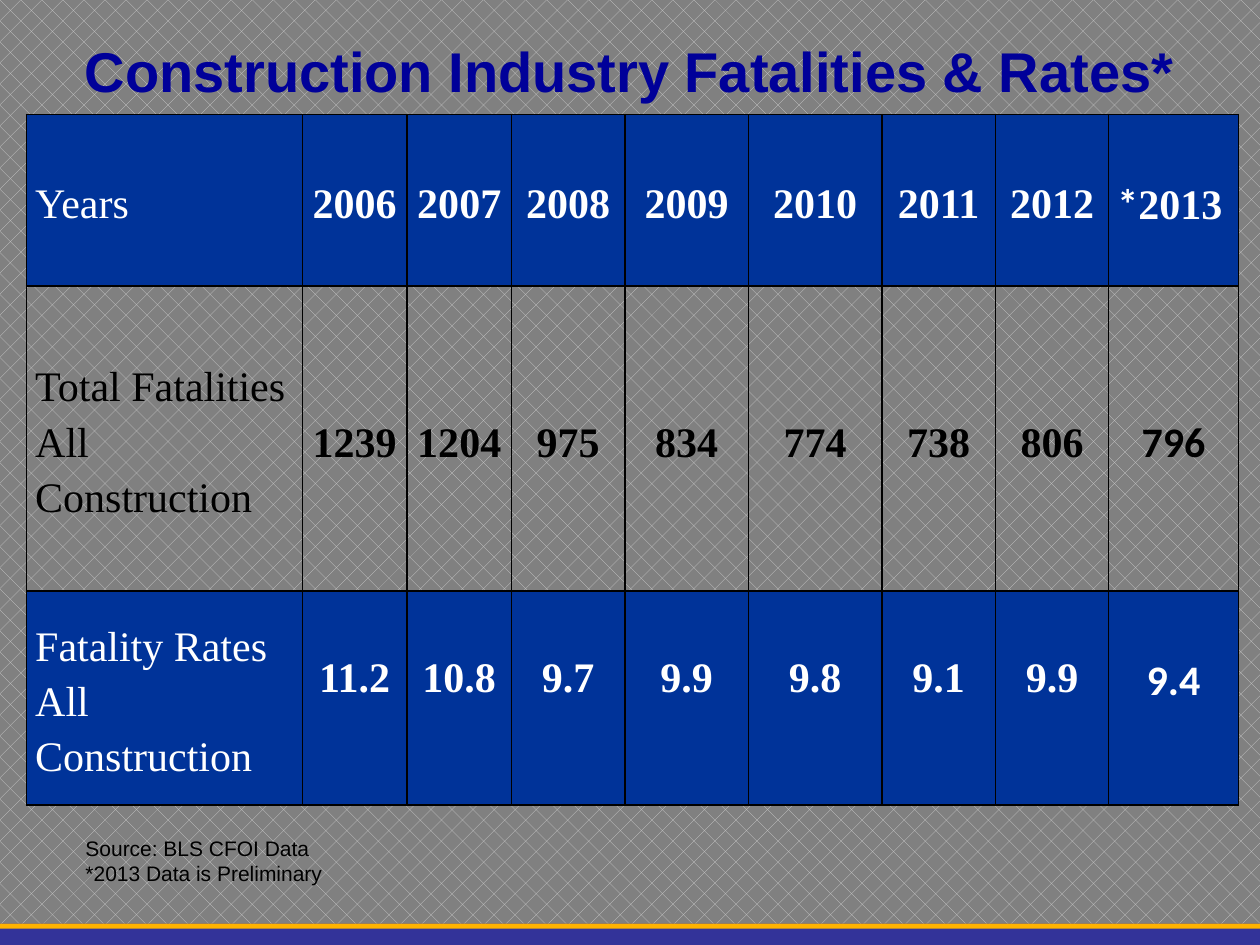
from lxml import etree
from pptx import Presentation, util as u
from pptx.dml.color import RGBColor
from pptx.enum import dml, shapes, text
from pptx.oxml.ns import qn

NAVY = RGBColor(0x00, 0x00, 0x99)
BLUE = RGBColor(0x00, 0x33, 0x99)
INDIGO = RGBColor(0x33, 0x33, 0x99)
GOLD = RGBColor(0xFF, 0xB3, 0x00)
GREY = RGBColor(0x80, 0x80, 0x80)
SILVER = RGBColor(0xCF, 0xCF, 0xCF)
WHITE = RGBColor(0xFF, 0xFF, 0xFF)
BLACK = RGBColor(0x00, 0x00, 0x00)

SERIF, SANS, ALT = "Times New Roman", "Arial", "Calibri"
CENTER, LEFT = text.PP_ALIGN.CENTER, text.PP_ALIGN.LEFT
MIDDLE, TOP = text.MSO_ANCHOR.MIDDLE, text.MSO_ANCHOR.TOP

COLUMNS = [2.19, 0.83, 0.83, 0.9, 0.98, 1.06, 0.9, 0.9, 1.03]
ROWS = [1.36, 2.42, 1.7]
DATA = [
    ["Years", "2006", "2007", "2008", "2009", "2010", "2011", "2012", "*2013"],
    ["Total Fatalities All Construction",
     "1239", "1204", "975", "834", "774", "738", "806", "796"],
    ["Fatality Rates All Construction",
     "11.2", "10.8", "9.7", "9.9", "9.8", "9.1", "9.9", "9.4"],
]


class SlideBuilder:
    """Holds the style and the current slide; boxes are percentages of the slide."""

    def __init__(self, prs):
        self.size = prs.slide_width, prs.slide_height
        self.slide = prs.slides.add_slide(prs.slide_layouts[5])

    def box(self, *shares):
        return [int(share * self.size[i % 2] / 100)
                for i, share in enumerate(shares)]

    def apply(self, target, **values):
        for name, value in values.items():
            setattr(target, name, value)

    def add_text(self, p, content, color, **font):
        r = p.add_run()
        r.text = content
        self.apply(r.font, **font)
        r.font.color.rgb = color

    def background(self, fore, back):
        fill = self.slide.background.fill
        fill.patterned()
        fill.pattern = dml.MSO_PATTERN.DIAGONAL_BRICK
        fill.fore_color.rgb, fill.back_color.rgb = fore, back

    def bar(self, box, color):
        sp = self.slide.shapes.add_shape(
            shapes.MSO_SHAPE.RECTANGLE, *self.box(*box))
        sp.shadow.inherit = False
        sp.fill.solid()
        sp.fill.fore_color.rgb = color
        sp.line.fill.background()

    def title(self, box, content):
        sp = self.slide.shapes.title
        sp.left, sp.top, sp.width, sp.height = self.box(*box)
        tf = sp.text_frame
        self.apply(tf, word_wrap=True, vertical_anchor=MIDDLE)
        p = tf.paragraphs[0]
        p.alignment = CENTER
        self.add_text(p, content, NAVY, name=SANS, size=u.Pt(32), bold=True)

    def note(self, box, lines):
        tf = self.slide.shapes.add_textbox(*self.box(*box)).text_frame
        tf.word_wrap = False
        for i, line in enumerate(lines):
            p = tf.add_paragraph() if i else tf.paragraphs[0]
            self.add_text(p, line, BLACK, name=SANS, size=u.Pt(12))

    def borders(self, cell):
        tc_pr = cell._tc.get_or_add_tcPr()
        for side in ("lnL", "lnR", "lnT", "lnB"):
            ln = etree.SubElement(tc_pr, qn(f"a:{side}"), w=str(u.Pt(1)))
            fill = etree.SubElement(ln, qn("a:solidFill"))
            etree.SubElement(fill, qn("a:srgbClr"), val=str(BLACK))

    def cell(self, cell, parts, color, fill, align, bold, **layout):
        self.borders(cell)
        if fill is None:
            cell.fill.background()
        else:
            cell.fill.solid()
            cell.fill.fore_color.rgb = fill
        self.apply(cell, **layout)
        p = cell.text_frame.paragraphs[0]
        self.apply(p, alignment=align, line_spacing=1.19)
        for content, face in parts:
            self.add_text(p, content, color, name=face, size=u.Pt(24), bold=bold)

    def table(self, box, data):
        table = self.slide.shapes.add_table(
            len(ROWS), len(COLUMNS), *self.box(*box)).table
        self.apply(table, first_row=False, horz_banding=False)
        for column, width in zip(table.columns, COLUMNS):
            column.width = u.Inches(width)
        last_row, last_col = len(ROWS) - 1, len(COLUMNS) - 1
        for i, values in enumerate(data):
            table.rows[i].height = u.Inches(ROWS[i])
            color, fill = (BLACK, None) if i == 1 else (WHITE, BLUE)
            for j, value in enumerate(values):
                # The preliminary year mixes faces and starts at the left
                marked = value.startswith("*")
                if marked:
                    parts = [("*", ALT), (value[1:], SERIF)]
                else:
                    parts = [(value, ALT if j == last_col else SERIF)]
                # Rates hang one line below the top of their row
                rate = i == last_row and j > 0
                self.cell(
                    table.cell(i, j), parts, color, fill,
                    LEFT if marked or j == 0 else CENTER, j > 0,
                    vertical_anchor=TOP if rate else MIDDLE,
                    margin_left=u.Inches(0.07), margin_right=u.Inches(0.07),
                    margin_top=u.Inches(0.44 if rate else 0), margin_bottom=0)


def main():
    prs = Presentation()
    prs.slide_width, prs.slide_height = u.Inches(10), u.Inches(7.5)
    s = SlideBuilder(prs)

    # Backdrop and footer stripes
    s.background(SILVER, GREY)
    s.bar((0, 97.73, 100, 2.27), INDIGO)
    s.bar((0, 97.73, 100, 0.53), GOLD)

    # Title, figures and source
    s.title((5, 2.27, 90, 10.4), "Construction Industry Fatalities & Rates*")
    s.table((2.1, 12.13, 96.2, 73.07), DATA)
    s.note((5.8, 87.73, 20.9, 9.47),
           ["Source: BLS CFOI Data", "*2013 Data is Preliminary"])

    prs.save("out.pptx")


if __name__ == "__main__":
    main()
